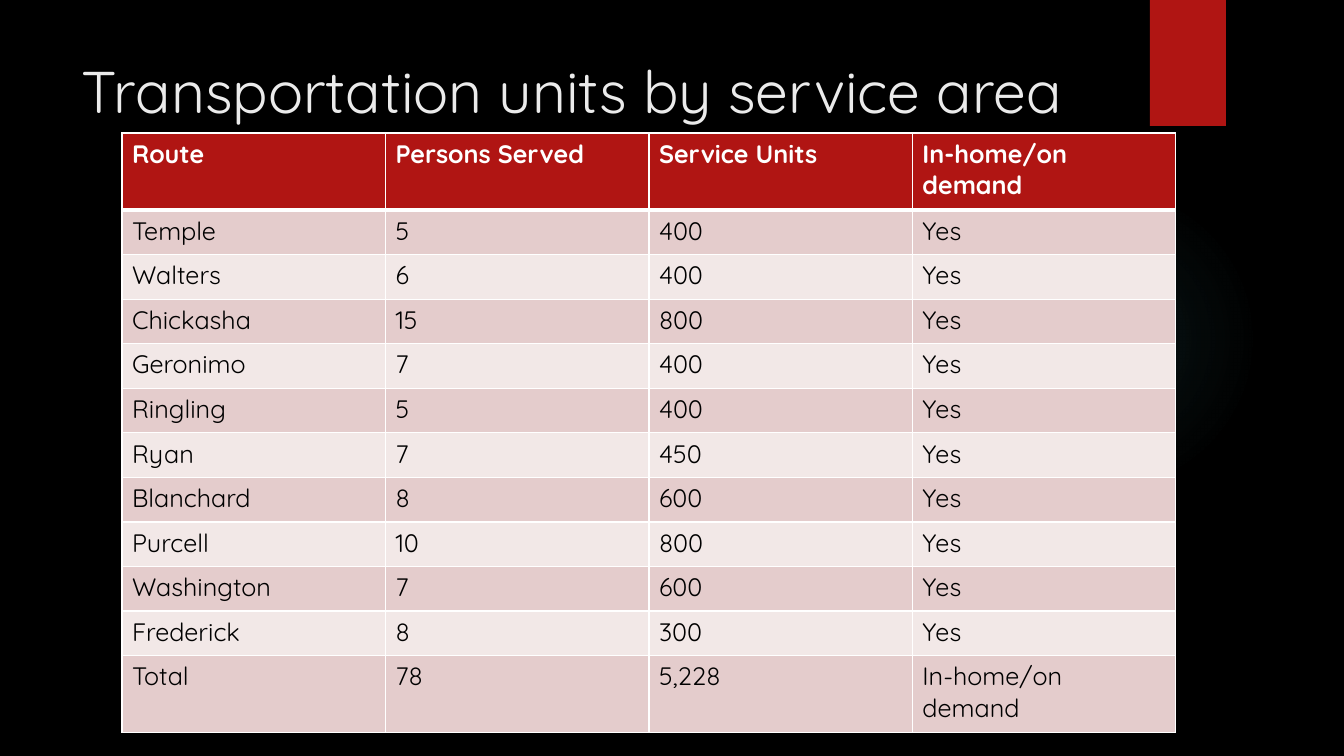
from typing import NamedTuple

from lxml.etree import SubElement
from pptx import Presentation
from pptx.dml.color import RGBColor
from pptx.enum.shapes import MSO_SHAPE
from pptx.enum.text import MSO_ANCHOR
from pptx.oxml import parse_xml
from pptx.oxml.ns import nsdecls, qn
from pptx.util import Emu, Pt

EMU_PER_PX = 12192000 / 1344
FONT = "Quicksand"
RED, WHITE, BLACK = "B01513", "FFFFFF", "000000"
BANDS = ("E4CCCC", "F2E8E7")
GLOW = "50B9C1"
GLOW_STOPS = ((0, 7), (36, 6), (69, 0))  # position and opacity, in percent
WRAPPED_ROW_HEIGHT = 77
SINGLE_ROWS_HEIGHT = 446


class Route(NamedTuple):
    name: str
    persons: str
    units: str
    on_demand: str = "Yes"


HEADER = Route("Route", "Persons Served", "Service Units", "In-home/on demand")
ROUTES = (
    Route("Temple", "5", "400"),
    Route("Walters", "6", "400"),
    Route("Chickasha", "15", "800"),
    Route("Geronimo", "7", "400"),
    Route("Ringling", "5", "400"),
    Route("Ryan", "7", "450"),
    Route("Blanchard", "8", "600"),
    Route("Purcell", "10", "800"),
    Route("Washington", "7", "600"),
    Route("Frederick", "8", "300"),
)
TOTAL = Route("Total", "78", "5,228", "In-home/on demand")


def px(n: int) -> Emu:
    return Emu(round(n * EMU_PER_PX))


def rgb(color: str) -> RGBColor:
    return RGBColor.from_string(color)


def add_plain_shape(slide, kind, left: int, top: int, width: int, height: int):
    sp = slide.shapes.add_shape(kind, px(left), px(top), px(width), px(height))
    sp.shadow.inherit = False
    sp.line.fill.background()
    return sp


def add_glow(slide) -> None:
    """Add the faint radial light behind the table."""
    sp = add_plain_shape(slide, MSO_SHAPE.OVAL, 949, 184, 310, 310)
    stops = "".join(
        f'<a:gs pos="{pos * 1000}"><a:srgbClr val="{GLOW}">'
        f'<a:alpha val="{alpha * 1000}"/></a:srgbClr></a:gs>'
        for pos, alpha in GLOW_STOPS
    )
    grad = parse_xml(
        f'<a:gradFill {nsdecls("a")}><a:gsLst>{stops}</a:gsLst><a:path path="circle">'
        '<a:fillToRect l="50000" t="50000" r="50000" b="50000"/></a:path></a:gradFill>'
    )
    sp.element.spPr.find(qn("a:prstGeom")).addnext(grad)


def add_ribbon(slide) -> None:
    sp = add_plain_shape(slide, MSO_SHAPE.RECTANGLE, 1150, 0, 76, 126)
    sp.fill.solid()
    sp.fill.fore_color.rgb = rgb(RED)


def style_paragraph(p, size: int, color: str, bold: bool = False) -> None:
    p.font.name = FONT
    p.font.size = Pt(size)
    p.font.bold = bold
    p.font.color.rgb = rgb(color)


def add_title(slide, text: str) -> None:
    tf = slide.shapes.add_textbox(px(72), px(50), px(1037), px(154)).text_frame
    tf.word_wrap = True
    tf.vertical_anchor = MSO_ANCHOR.TOP
    tf.text = text
    style_paragraph(tf.paragraphs[0], 42, "EBEBEB")


def set_borders(cell, widths: dict[str, int]) -> None:
    """Draw white borders, keyed by side (L, R, T, B) with widths in points."""
    tcPr = cell._tc.get_or_add_tcPr()
    for i, (side, width) in enumerate(widths.items()):
        ln = SubElement(tcPr, qn(f"a:ln{side}"), w=str(Pt(width)))
        fill = SubElement(ln, qn("a:solidFill"))
        SubElement(fill, qn("a:srgbClr"), val=WHITE)
        tcPr.insert(i, ln)


def add_route_table(slide) -> None:
    rows = (HEADER, *ROUTES, TOTAL)
    height = 2 * WRAPPED_ROW_HEIGHT + SINGLE_ROWS_HEIGHT
    table = slide.shapes.add_table(
        len(rows), len(HEADER), px(122), px(133), px(1054), px(height)
    ).table
    for i, route in enumerate(rows):
        is_header = route is HEADER
        if route in ROUTES:
            table.rows[i].height = px(SINGLE_ROWS_HEIGHT) // len(ROUTES)
        else:
            table.rows[i].height = px(WRAPPED_ROW_HEIGHT)
        for j, text in enumerate(route):
            cell = table.cell(i, j)
            cell.text = text
            cell.fill.solid()
            cell.fill.fore_color.rgb = rgb(RED if is_header else BANDS[(i - 1) % 2])
            style_paragraph(
                cell.text_frame.paragraphs[0], 18, WHITE if is_header else BLACK, is_header
            )
            if is_header:
                set_borders(cell, {"L": 1, "R": 1, "T": 1, "B": 3})
            else:
                set_borders(cell, {"L": 1, "R": 1, "B": 1})


def main() -> None:
    prs = Presentation()
    prs.slide_width, prs.slide_height = px(1344), px(756)
    slide = prs.slides.add_slide(prs.slide_layouts[6])
    slide.background.fill.solid()
    slide.background.fill.fore_color.rgb = rgb(BLACK)
    add_glow(slide)
    add_ribbon(slide)
    add_title(slide, "Transportation units by service area")
    add_route_table(slide)
    prs.save("out.pptx")


if __name__ == "__main__":
    main()
